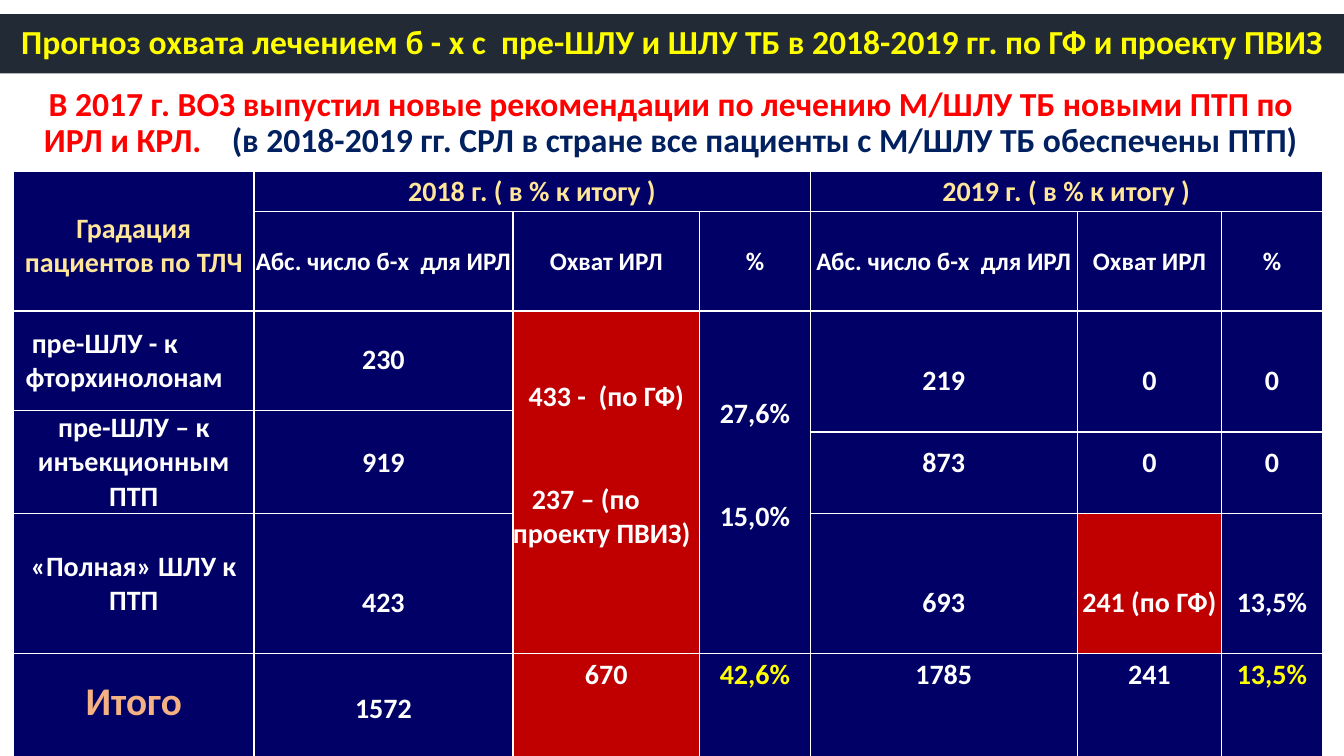
from lxml.etree import SubElement
from pptx import Presentation
from pptx.dml.color import RGBColor
from pptx.enum.shapes import MSO_SHAPE
from pptx.enum.text import MSO_ANCHOR, PP_ALIGN
from pptx.oxml.ns import qn
from pptx.util import Pt

FONT = "Calibri"
NAVY, RED, WHITE = "000066", "C00000", "FFFFFF"
CREAM, YELLOW, PEACH = "FFE699", "FFFF00", "F4B183"

BANNERS = [
    (0, 10, 960, 42.5, "222A35", [
        ("Прогноз охвата лечением б - х с  пре-ШЛУ и ШЛУ ТБ в 2018-2019 гг. по ГФ и проекту ПВИЗ", YELLOW)]),
    (7.2, 60.5, 944, 55.4, WHITE, [
        ("В 2017 г. ВОЗ выпустил новые рекомендации по лечению М/ШЛУ ТБ новыми ПТП по ИРЛ и КРЛ.    ", "FF0000"),
        ("(в 2018-2019 гг. СРЛ в стране все пациенты с М/ШЛУ ТБ обеспечены ПТП)", "002060")]),
]

TABLE_LEFT, TABLE_TOP = 9.7, 122.4
COLUMNS = [171.7, 185, 133.4, 79, 190.8, 103, 72]
ROWS = [28.8, 71, 71.3, 15.1, 56.2, 100, 76.3]

SPANS = [
    (0, 0, 2, 1), (0, 1, 1, 3), (0, 4, 1, 3),
    (2, 2, 4, 1), (2, 3, 4, 1), (2, 4, 2, 1), (2, 5, 2, 1), (2, 6, 2, 1),
    (3, 0, 2, 1), (3, 1, 2, 1),
]

HEADINGS = {
    (0, 0): "Градация пациентов по ТЛЧ",
    (0, 1): "2018 г. ( в % к итогу )",
    (0, 4): "2019 г. ( в % к итогу )",
}
SUBHEADINGS = ["Абс. число б-х  для ИРЛ", "Охват ИРЛ", "%"]
GROUPS = {
    (2, 0): ["пре-ШЛУ - к", "фторхинолонам"],
    (3, 0): ["пре-ШЛУ – к инъекционным ПТП"],
    (5, 0): ["«Полная» ШЛУ к", "ПТП"],
}
COVERAGE = {
    (2, 2): ["433 -  (по ГФ)", "237 – (по проекту ПВИЗ)"],
    (2, 3): ["27,6%", "15,0%"],
}
NUMBERS = {
    (2, 1): "230", (3, 1): "919", (5, 1): "423",
    (2, 4): "219", (2, 5): "0", (2, 6): "0",
    (4, 4): "873", (4, 5): "0", (4, 6): "0",
    (5, 4): "693", (5, 5): "241 (по ГФ)", (5, 6): "13,5%",
}
TOTALS = ["Итого", "1572", "670", "42,6%", "1785", "241", "13,5%"]
RED_CELLS = {(2, 2), (5, 5), (6, 2)}
LINE = 24.4


def color(value):
    return RGBColor.from_string(value)


def paint(target, value):
    target.fill.solid()
    target.fill.fore_color.rgb = color(value)


def add_span(para, text, size, value):
    span = para.add_run()
    span.text = text
    span.font.name = FONT
    span.font.size = Pt(size)
    span.font.bold = True
    span.font.color.rgb = color(value)


def add_banner(page, left, top, width, height, fill, spans):
    box = page.shapes.add_shape(MSO_SHAPE.RECTANGLE, Pt(left), Pt(top), Pt(width), Pt(height))
    box.shadow.inherit = False
    paint(box, fill)
    box.line.fill.background()
    box.text_frame.word_wrap = True
    box.text_frame.vertical_anchor = MSO_ANCHOR.MIDDLE
    para = box.text_frame.paragraphs[0]
    para.alignment = PP_ALIGN.CENTER
    para.line_spacing = 0.9
    for text, value in spans:
        add_span(para, text, 24, value)


def style_cell(cell, fill):
    cell.margin_left = cell.margin_right = cell.margin_top = cell.margin_bottom = 0
    properties = cell._tc.get_or_add_tcPr()
    for side in ("a:lnL", "a:lnR", "a:lnT", "a:lnB"):
        border = SubElement(properties, qn(side), w=str(Pt(1)))
        solid = SubElement(border, qn("a:solidFill"))
        SubElement(solid, qn("a:srgbClr"), val=WHITE)
    paint(cell, fill)


def write(cell, lines, size=20, value=WHITE, anchor=MSO_ANCHOR.MIDDLE, bottom=0, gap=0):
    cell.vertical_anchor = anchor
    cell.margin_bottom = Pt(bottom)
    frame = cell.text_frame
    for index, text in enumerate(lines):
        para = frame.add_paragraph() if index else frame.paragraphs[0]
        para.alignment = PP_ALIGN.CENTER
        if index and gap:
            para.space_before = Pt(gap)
        add_span(para, text, size, value)
    return frame.paragraphs


def align_left(para, margin, indent):
    para.alignment = PP_ALIGN.LEFT
    properties = para._p.get_or_add_pPr()
    properties.set("marL", str(Pt(margin)))
    properties.set("indent", str(Pt(indent)))


def fill_table(table):
    for column, width in zip(table.columns, COLUMNS):
        column.width = Pt(width)
    for row, height in zip(table.rows, ROWS):
        row.height = Pt(height)
    for row in range(len(ROWS)):
        for column in range(len(COLUMNS)):
            style_cell(table.cell(row, column), RED if (row, column) in RED_CELLS else NAVY)
    for row, column, down, across in SPANS:
        table.cell(row, column).merge(table.cell(row + down - 1, column + across - 1))

    low = MSO_ANCHOR.BOTTOM
    for place, text in HEADINGS.items():
        tall = place == (0, 0)
        write(table.cell(*place), [text], value=CREAM,
              anchor=low if tall else MSO_ANCHOR.MIDDLE, bottom=22 if tall else 0)
    for column, text in enumerate(SUBHEADINGS * 2, 1):
        write(table.cell(1, column), [text], size=18)
    for place, lines in GROUPS.items():
        paras = write(table.cell(*place), lines)
        if place == (2, 0):
            for para, margin in zip(paras, (13, 8.6)):
                align_left(para, margin, 0)
    for place, lines in COVERAGE.items():
        paras = write(table.cell(*place), lines, bottom=LINE, gap=2 * LINE)
        if place == (2, 2):
            align_left(paras[1], 0, 13.5)
    for place, text in NUMBERS.items():
        write(table.cell(*place), [text], anchor=low, bottom=LINE)
    for column, text in enumerate(TOTALS):
        value = PEACH if column == 0 else YELLOW if "%" in text else WHITE
        write(table.cell(6, column), [text], 28 if column == 0 else 20, value, low,
              LINE if column < 2 else 2 * LINE)


def main():
    deck = Presentation()
    deck.slide_width, deck.slide_height = Pt(960), Pt(540)
    page = deck.slides.add_slide(deck.slide_layouts[6])
    add_banner(page, *BANNERS[0])
    frame = page.shapes.add_table(len(ROWS), len(COLUMNS), Pt(TABLE_LEFT), Pt(TABLE_TOP),
                                  Pt(sum(COLUMNS)), Pt(sum(ROWS)))
    fill_table(frame.table)
    add_banner(page, *BANNERS[1])
    deck.save("out.pptx")


if __name__ == "__main__":
    main()
